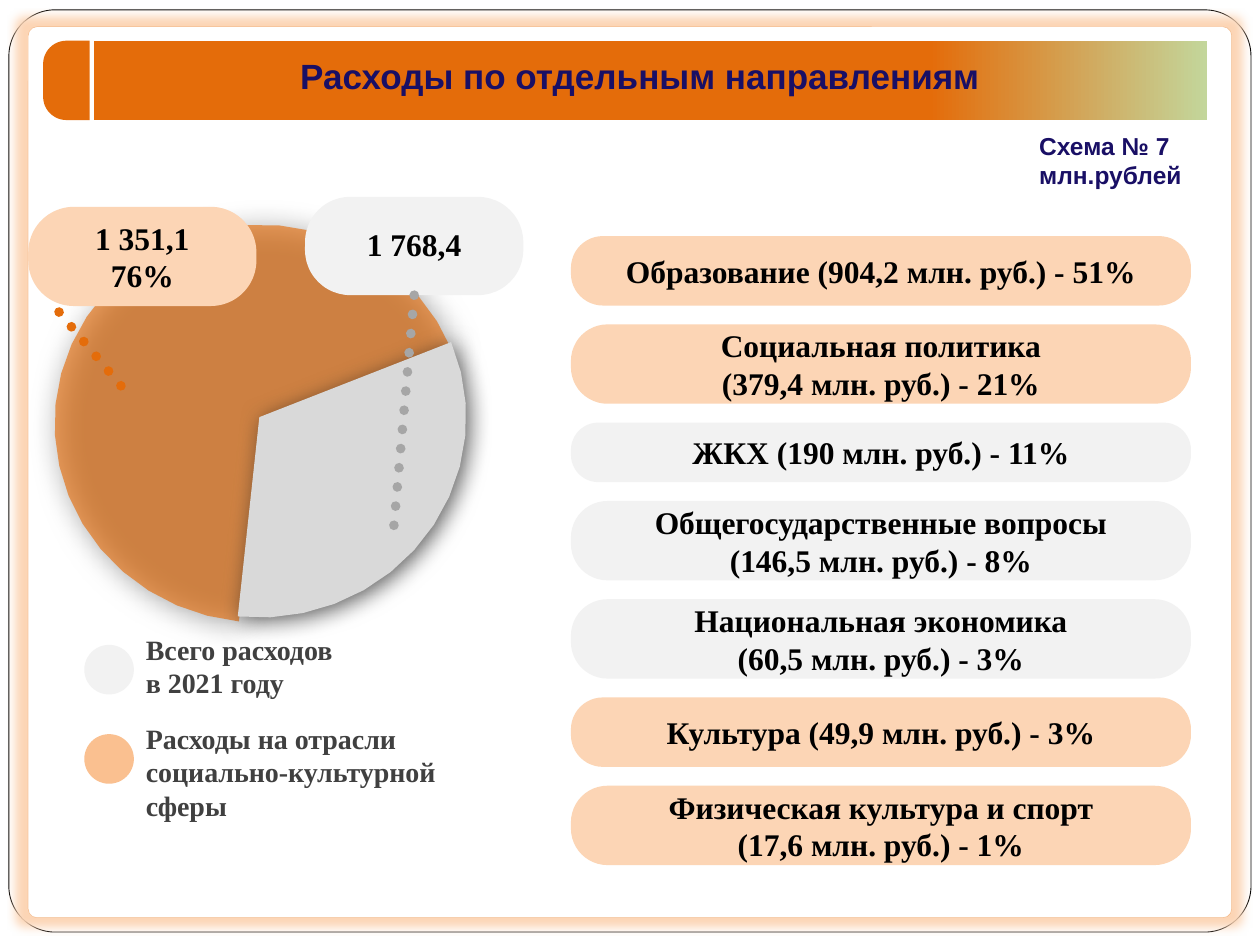
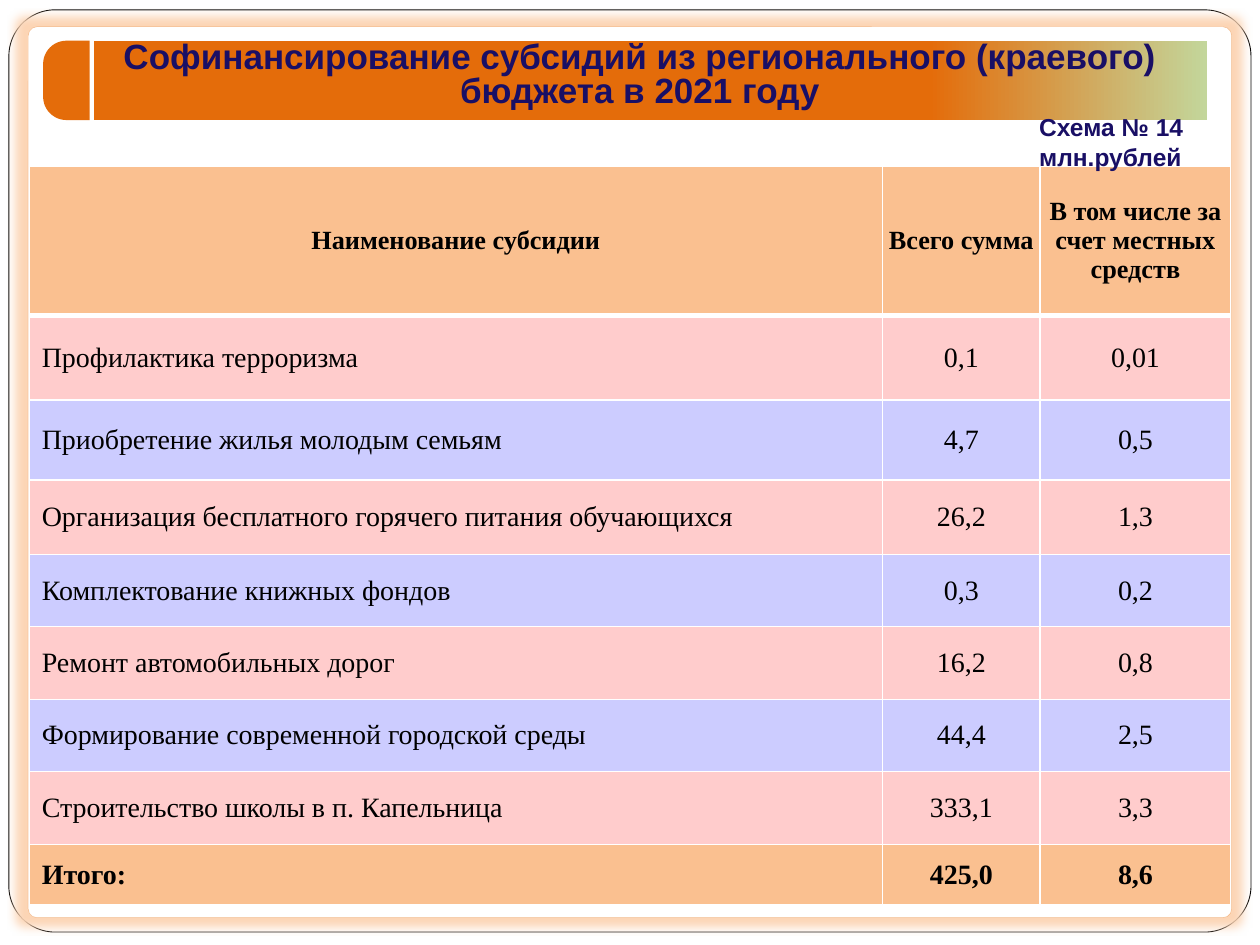
from math import cos, radians, sin

from lxml import etree
from pptx import Presentation
from pptx import util as u
from pptx.dml.color import RGBColor
from pptx.enum import dml, shapes, text
from pptx.oxml.ns import qn

Cm, Pt = u.Cm, u.Pt
MSO, AL, ANC = shapes.MSO_SHAPE, text.PP_ALIGN, text.MSO_ANCHOR

# Colours and fonts
ORANGE = RGBColor(0xE4, 0x6C, 0x0A)
GREEN = RGBColor(0xC3, 0xD6, 0x9B)
PEACH = RGBColor(0xFC, 0xD5, 0xB5)
APRICOT = RGBColor(0xFA, 0xC0, 0x90)
PINK = RGBColor(0xFF, 0xCC, 0xCC)
LILAC = RGBColor(0xCC, 0xCC, 0xFF)
PALE = RGBColor(0xF2, 0xF2, 0xF2)
SILVER = RGBColor(0xD9, 0xD9, 0xD9)
GREY = RGBColor(0xA6, 0xA6, 0xA6)
DARK = RGBColor(0x40, 0x40, 0x40)
NAVY = RGBColor(0x19, 0x0F, 0x65)
BLACK = RGBColor(0, 0, 0)
WHITE = RGBColor(0xFF, 0xFF, 0xFF)
SANS, SERIF = "Arial", "Times New Roman"

# Content
UNITS = "млн.рублей"
SPENDING = dict(title="Расходы по отдельным направлениям", title_top=1.13, title_h=0.94,
                scheme="Схема № 7", scheme_top=2.51)
SUBSIDIES = dict(title="Софинансирование субсидий из регионального (краевого) бюджета в 2021 году",
                 title_top=0.74, title_h=1.62, scheme="Схема № 14", scheme_top=2.13)

# Directions of spending: lines, height in cm, fill
DIRECTIONS = [
    (["Образование (904,2 млн. руб.) - 51%"], 1.4, PEACH),
    (["Социальная политика", "(379,4 млн. руб.) - 21%"], 1.6, PEACH),
    (["ЖКХ (190 млн. руб.) - 11%"], 1.2, PALE),
    (["Общегосударственные вопросы", "(146,5 млн. руб.) - 8%"], 1.6, PALE),
    (["Национальная экономика", "(60,5 млн. руб.) - 3%"], 1.6, PALE),
    (["Культура (49,9 млн. руб.) - 3%"], 1.4, PEACH),
    (["Физическая культура и спорт", "(17,6 млн. руб.) - 1%"], 1.6, PEACH),
]
SOCIAL_TOTAL = ["1 351,1", "76%"]
ALL_TOTAL = ["1 768,4"]

# Legend: lines, colour, top of the dot, top, width and height of the text in cm
LEGEND = [
    (["Всего расходов", "в 2021 году"], PALE, 13.0, 12.63, 4.42, 1.6),
    (["Расходы на отрасли социально-культурной сферы"], APRICOT, 14.8, 14.43, 6.76, 2.29),
]

# Pie sectors: centre x, y, radius x, y in cm, first and last angle, colour, opacity, shadow
ARC_STEP = 9
SECTORS = [
    (5.25, 8.54, 4.15, 4.01, 96, 338, ORANGE, 64, dict(alpha=55, blur=17)),
    (5.23, 8.41, 4.17, 4.04, -22, 96, SILVER, 100, dict(alpha=62, blur=13)),
]

TABLE = [
    ("Наименование субсидии", "Всего сумма", "В том числе за счет местных средств"),
    ("Профилактика терроризма", "0,1", "0,01"),
    ("Приобретение жилья молодым семьям", "4,7", "0,5"),
    ("Организация бесплатного горячего питания обучающихся", "26,2", "1,3"),
    ("Комплектование книжных фондов", "0,3", "0,2"),
    ("Ремонт автомобильных дорог", "16,2", "0,8"),
    ("Формирование современной городской среды", "44,4", "2,5"),
    ("Строительство школы в п. Капельница", "333,1", "3,3"),
    ("Итого:", "425,0", "8,6"),
]
COL_WIDTHS = [17.2, 3.18, 3.84]
ROW_HEIGHTS = [3.01, 1.7, 1.62, 1.5, 1.45, 1.47, 1.45, 1.47, 1.22]


def box(left, top, width, height):
    return Cm(left), Cm(top), Cm(width), Cm(height)


def write(tf, lines, size=18, font=SERIF, color=BLACK, bold=True, align=AL.LEFT,
          spacing=None, anchor=ANC.TOP, wrap=True):
    tf.word_wrap = wrap
    tf.vertical_anchor = anchor
    for i, line in enumerate(lines):
        p = tf.paragraphs[0] if i == 0 else tf.add_paragraph()
        p.alignment, p.line_spacing = align, spacing
        p.space_before = Pt(0)
        r = p.add_run()
        r.text = line
        f = r.font
        f.size, f.name, f.bold = Pt(size), font, bold
        f.color.rgb = color


def add_text(s, place, lines, **fmt):
    write(s.shapes.add_textbox(*box(*place)).text_frame, lines, **fmt)


def paint(sp, color, line=None, width=0.5):
    sp.shadow.inherit = False
    sp.fill.solid()
    sp.fill.fore_color.rgb = color
    if line is None:
        sp.line.fill.background()
    else:
        sp.line.color.rgb = line
        sp.line.width = Pt(width)
    return sp


def add_shape(s, kind, place, color, adj=None, **line):
    sp = paint(s.shapes.add_shape(kind, *box(*place)), color, **line)
    if adj is not None:
        sp.adjustments[0] = adj
    return sp


def set_alpha(fill_element, percent):
    clr = fill_element.find(".//" + qn("a:srgbClr"))
    etree.SubElement(clr, qn("a:alpha")).set("val", str(percent * 1000))


def add_shadow(sp, color=BLACK, alpha=100, blur=5, dist=3, angle=45, scale=100):
    effects = sp.element.spPr.find(qn("a:effectLst"))
    shadow = etree.SubElement(effects, qn("a:outerShdw"), {
        "blurRad": str(Pt(blur)), "dist": str(Pt(dist)), "dir": str(angle * 60000),
        "sx": str(scale * 1000), "sy": str(scale * 1000), "algn": "ctr", "rotWithShape": "0"})
    etree.SubElement(shadow, qn("a:srgbClr"), val=str(color))
    set_alpha(shadow, alpha)


def add_frame(s, layout):
    """Draw the page frame and title band, then move them to the shared layout."""
    outer = add_shape(s, MSO.ROUNDED_RECTANGLE, (0.18, 0.2, 25.04, 18.59), WHITE, 0.05, line=BLACK)
    inner = add_shape(s, MSO.ROUNDED_RECTANGLE, (0.57, 0.54, 24.26, 17.96), WHITE, 0.01,
                      line=ORANGE, width=0.25)
    set_alpha(inner.element.spPr.find(qn("a:ln")), 39)
    add_shadow(inner, PEACH, dist=0, angle=0, scale=102)
    cap = add_shape(s, MSO.ROUND_2_SAME_RECTANGLE, (0.54, 1.15, 1.6, 0.94), ORANGE, 0.5)
    cap.rotation = 270
    band = add_shape(s, MSO.RECTANGLE, (1.89, 0.82, 22.45, 1.6), ORANGE)
    band.fill.gradient()
    band.fill.gradient_angle = 0
    for stop, position, color in zip(band.fill.gradient_stops, (0.75, 1), (ORANGE, GREEN)):
        stop.position = position
        stop.color.rgb = color
    for i, sp in enumerate((outer, inner, cap, band)):
        sp.element.nvSpPr.cNvPr.set("id", str(20 + i))
        layout.shapes.element.insert(2 + i, sp.element)


def add_heading(s, title, title_top, title_h, scheme, scheme_top):
    sp = s.shapes.title
    sp.left, sp.top, sp.width, sp.height = box(0.9, title_top, 24, title_h)
    write(sp.text_frame, [title], size=20, font=SANS, color=NAVY, align=AL.CENTER, spacing=0.8)
    sp.text_frame.auto_size = text.MSO_AUTO_SIZE.NONE
    note = dict(size=14, font=SANS, color=NAVY)
    add_text(s, (20.7, scheme_top + 0.6, 3.4, 0.86), [UNITS], wrap=False, **note)
    add_text(s, (20.7, scheme_top, 3.81, 0.86), [scheme], **note)


def add_pill(s, place, lines, color, spacing=None):
    sp = add_shape(s, MSO.ROUNDED_RECTANGLE, place, color, 0.46)
    sp.text_frame.margin_top = sp.text_frame.margin_bottom = 0
    write(sp.text_frame, lines, align=AL.CENTER, anchor=ANC.MIDDLE, spacing=spacing)
    return sp


def add_sector(s, cx, cy, rx, ry, first, last, color, opacity, shadow):
    count = round((last - first) / ARC_STEP)
    angles = [radians(first + (last - first) * i / count) for i in range(count + 1)]
    arc = [(Cm(cx + rx * cos(a)), Cm(cy + ry * sin(a))) for a in angles]
    builder = s.shapes.build_freeform(Cm(cx), Cm(cy))
    builder.add_line_segments(arc, close=True)
    sp = paint(builder.convert_to_shape(), color)
    if opacity < 100:
        set_alpha(sp.element.spPr.find(qn("a:solidFill")), opacity)
    add_shadow(sp, **shadow)


def add_dotted(s, x1, y1, x2, y2, color):
    ln = s.shapes.add_connector(shapes.MSO_CONNECTOR.STRAIGHT, Cm(x1), Cm(y1), Cm(x2), Cm(y2))
    ln.line.color.rgb = color
    ln.line.width = Pt(5.5)
    ln.line.dash_style = dml.MSO_LINE.ROUND_DOT
    spPr = ln.element.spPr
    spPr.find(qn("a:ln")).set("cap", "rnd")
    etree.SubElement(spPr, qn("a:effectLst"))
    return ln


def set_borders(cell, bottom):
    tcPr = cell._tc.get_or_add_tcPr()
    for side, width in (("L", 1), ("R", 1), ("T", 1), ("B", bottom)):
        ln = etree.SubElement(tcPr, qn("a:ln" + side), w=str(Pt(width)))
        etree.SubElement(etree.SubElement(ln, qn("a:solidFill")), qn("a:srgbClr"), val=str(WHITE))


def build_spending(s):
    add_heading(s, **SPENDING)

    # Pie with its two callouts
    for sector in SECTORS:
        add_sector(s, *sector)
    add_dotted(s, 1.19, 6.29, 2.49, 7.84, ORANGE)
    add_pill(s, (0.57, 4.17, 4.6, 2), SOCIAL_TOTAL, PEACH)
    total = add_pill(s, (6.15, 3.97, 4.4, 1.98), ALL_TOTAL, PALE, spacing=Pt(19))
    add_dotted(s, 8.35, 5.95, 7.93, 10.72, GREY).begin_connect(total, 2)

    # Legend
    for lines, color, dot_top, top, width, height in LEGEND:
        add_shape(s, MSO.OVAL, (1.7, dot_top, 1, 1), color)
        add_text(s, (2.69, top, width, height), lines, size=16, color=DARK, spacing=Pt(19))

    # Directions, one under another with equal gaps
    top, gap = 4.76, 0.38
    for lines, height, color in DIRECTIONS:
        add_pill(s, (11.51, top, 12.5, height), lines, color)
        top += height + gap


def build_subsidies(s):
    # Table
    place = box(0.59, 3.35, sum(COL_WIDTHS), sum(ROW_HEIGHTS))
    tbl = s.shapes.add_table(len(TABLE), len(COL_WIDTHS), *place).table
    for col, width in zip(tbl.columns, COL_WIDTHS):
        col.width = Cm(width)
    last = len(TABLE) - 1
    for i, (row, values) in enumerate(zip(tbl.rows, TABLE)):
        row.height = Cm(ROW_HEIGHTS[i])
        strong = i in (0, last)
        for j, (cell, value) in enumerate(zip(row.cells, values)):
            set_borders(cell, bottom=3 if i == 0 else 1)
            cell.fill.solid()
            cell.fill.fore_color.rgb = APRICOT if strong else (LILAC, PINK)[i % 2]
            cell.vertical_anchor = ANC.MIDDLE
            if i == 0:
                cell.margin_top = cell.margin_bottom = Cm(0.1)
                if j:
                    cell.margin_left = cell.margin_right = Cm(0.1)
            write(cell.text_frame, [value], size=15 if i == 0 else 16, bold=strong,
                  align=AL.CENTER if i == 0 or j else AL.LEFT, anchor=None, wrap=None)

    add_heading(s, **SUBSIDIES)


def main():
    prs = Presentation()
    prs.slide_width, prs.slide_height = Cm(25.4), Cm(19.05)
    layout = prs.slide_layouts[5]
    spending, subsidies = (prs.slides.add_slide(layout) for _ in range(2))
    add_frame(spending, layout)
    build_spending(spending)
    build_subsidies(subsidies)
    prs.save("out.pptx")


if __name__ == "__main__":
    main()
